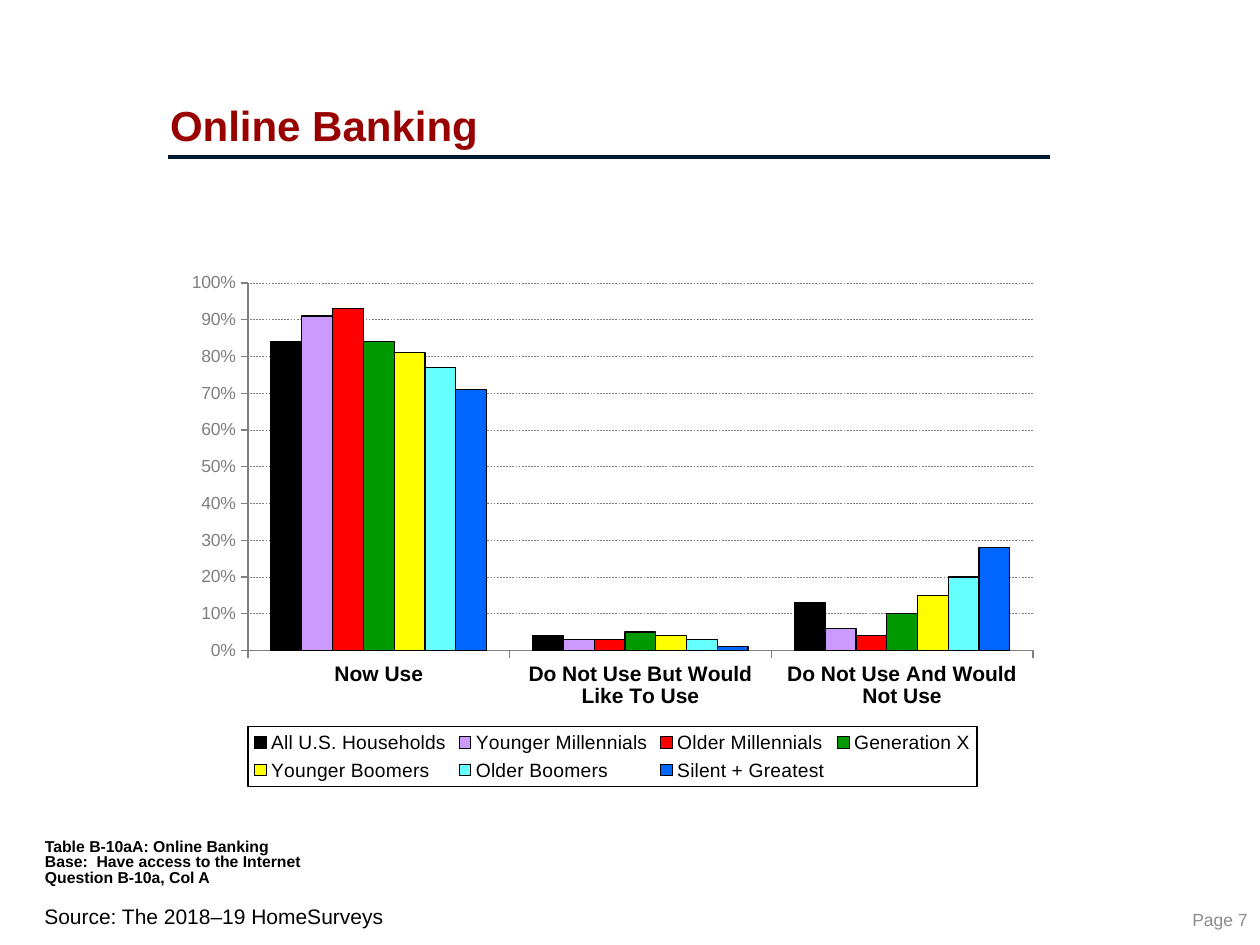
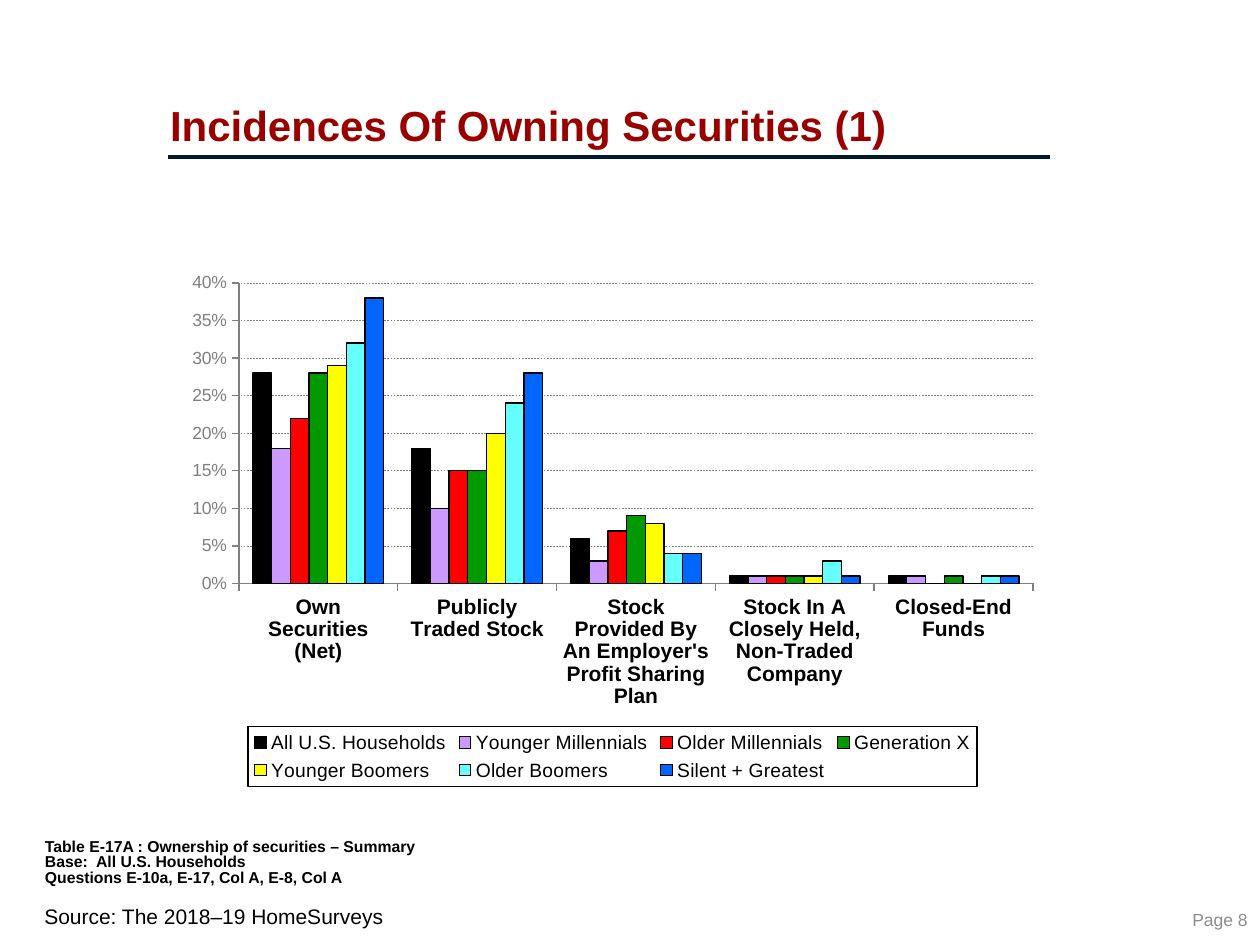
from lxml.etree import SubElement
from pptx import Presentation
from pptx.chart.data import CategoryChartData
from pptx.dml.color import RGBColor
from pptx.enum.chart import XL_CHART_TYPE, XL_LEGEND_POSITION, XL_TICK_MARK
from pptx.enum.dml import MSO_LINE
from pptx.enum.shapes import MSO_CONNECTOR
from pptx.enum.text import MSO_ANCHOR, MSO_AUTO_SIZE, PP_ALIGN
from pptx.oxml import parse_xml
from pptx.oxml.ns import nsdecls, qn
from pptx.util import Inches, Pt

PX = Inches(1) / 126
FONT = "Arial"
BLACK = RGBColor(0x00, 0x00, 0x00)
TITLE_RED = RGBColor(0x99, 0x00, 0x00)
RULE_NAVY = RGBColor(0x00, 0x19, 0x2F)
AXIS_GRAY = RGBColor(0x7F, 0x7F, 0x7F)
PAGE_GRAY = RGBColor(0x8C, 0x8C, 0x8C)
GENERATIONS = {
    "All U.S. Households": BLACK,
    "Younger Millennials": RGBColor(0xCC, 0x99, 0xFF),
    "Older Millennials": RGBColor(0xFF, 0x00, 0x00),
    "Generation X": RGBColor(0x00, 0x99, 0x00),
    "Younger Boomers": RGBColor(0xFF, 0xFF, 0x00),
    "Older Boomers": RGBColor(0x66, 0xFF, 0xFF),
    "Silent + Greatest": RGBColor(0x00, 0x66, 0xFF),
}
CHART_BOX = (175, 262, 874, 525)
LEGEND_BOX = (248, 727, 729, 60)

PAGES = [
    {
        "number": 7,
        "title": "Online Banking",
        "note": "Table B-10aA: Online Banking\n"
                "Base:  Have access to the Internet\n"
                "Question B-10a, Col A",
        "plot": (248, 283, 785, 368),
        "top": 1.0,
        "step": 0.1,
        "shares": {
            "Now Use": (0.84, 0.91, 0.93, 0.84, 0.81, 0.77, 0.71),
            "Do Not Use But Would Like To Use":
                (0.04, 0.03, 0.03, 0.05, 0.04, 0.03, 0.01),
            "Do Not Use And Would Not Use":
                (0.13, 0.06, 0.04, 0.10, 0.15, 0.20, 0.28),
        },
    },
    {
        "number": 8,
        "title": "Incidences Of Owning Securities (1)",
        "note": "Table E-17A : Ownership of securities – Summary\n"
                "Base:  All U.S. Households\n"
                "Questions E-10a, E-17, Col A, E-8, Col A",
        "plot": (239, 283, 794, 301),
        "top": 0.4,
        "step": 0.05,
        "shares": {
            "Own Securities (Net)":
                (0.28, 0.18, 0.22, 0.28, 0.29, 0.32, 0.38),
            "Publicly Traded Stock":
                (0.18, 0.10, 0.15, 0.15, 0.20, 0.24, 0.28),
            "Stock Provided By An Employer's Profit Sharing Plan":
                (0.06, 0.03, 0.07, 0.09, 0.08, 0.04, 0.04),
            "Stock In A Closely Held, Non-Traded Company":
                (0.01, 0.01, 0.01, 0.01, 0.01, 0.03, 0.01),
            "Closed-End Funds":
                (0.01, 0.01, 0, 0.01, 0, 0.01, 0.01),
        },
    },
]


def emu(*lengths):
    """Turn px lengths into EMU."""
    return [round(length * PX) for length in lengths]


def style_font(font, size, color, bold=False):
    """Apply the deck's typeface with a size, colour and weight."""
    font.name = FONT
    font.size = Pt(size)
    font.bold = bold
    font.color.rgb = color


def style_line(line, color, width):
    """Set the colour and width of a line."""
    line.color.rgb = color
    line.width = Pt(width)


def fill_frame(frame, text, anchor, insets=None):
    """Put text in a frame and return its only paragraph."""
    frame.text = text.replace("\n", "\v")
    frame.word_wrap = True
    frame.auto_size = MSO_AUTO_SIZE.NONE
    frame.vertical_anchor = anchor
    if insets:
        (frame.margin_left, frame.margin_top,
         frame.margin_right, frame.margin_bottom) = emu(*insets)
    return frame.paragraphs[0]


def add_label(slide, box, text, size, color, anchor, bold=False, insets=None):
    """Add a text box and return its paragraph."""
    label = slide.shapes.add_textbox(*emu(*box))
    paragraph = fill_frame(label.text_frame, text, anchor, insets)
    style_font(paragraph.font, size, color, bold)
    return paragraph


def set_title(slide, text):
    """Place and format the slide title."""
    title = slide.shapes.title
    title.left, title.top, title.width, title.height = emu(170, 67, 883, 89)
    heading = fill_frame(title.text_frame, text, MSO_ANCHOR.BOTTOM, (0, 0, 0, 6))
    heading.alignment = PP_ALIGN.LEFT
    heading.line_spacing = 0.8
    style_font(heading.font, 24, TITLE_RED, bold=True)


def add_title_rule(slide):
    """Draw the rule under the title."""
    rule = slide.shapes.add_connector(
        MSO_CONNECTOR.STRAIGHT, *emu(168, 157, 1050, 157))
    style_line(rule.line, RULE_NAVY, 2)
    SubElement(rule.line._get_or_add_ln().getparent(), qn("a:effectLst"))


def add_footer(slide, number):
    """Add the source line and the page number."""
    add_label(slide, (32, 897, 1124, 38), "Source: The 2018–19 HomeSurveys",
              12, BLACK, MSO_ANCHOR.TOP)
    page_label = add_label(slide, (1167, 902, 93, 34), f"Page {number}",
                           10, PAGE_GRAY, MSO_ANCHOR.MIDDLE)
    page_label.alignment = PP_ALIGN.RIGHT


def place_in_chart(element, box, index, target=""):
    """Fix a chart part at a px box on the slide."""
    for old_layout in element.findall(qn("c:layout")):
        element.remove(old_layout)
    left, top, width, height = CHART_BOX
    x, y, w, h = box
    shares = {"x": (x - left) / width, "y": (y - top) / height,
              "w": w / width, "h": h / height}
    layout = parse_xml(
        f"<c:layout {nsdecls('c')}><c:manualLayout>{target}"
        '<c:xMode val="edge"/><c:yMode val="edge"/>'
        + "".join(f'<c:{key} val="{share:.4f}"/>' for key, share in shares.items())
        + "</c:manualLayout></c:layout>")
    element.insert(index, layout)


def style_axes(chart, top, step):
    """Format the category and percentage axes."""
    categories, percents = chart.category_axis, chart.value_axis
    for axis in (categories, percents):
        axis.major_tick_mark = XL_TICK_MARK.OUTSIDE
        axis.minor_tick_mark = XL_TICK_MARK.NONE
        style_line(axis.format.line, AXIS_GRAY, 0.75)
    style_font(categories.tick_labels.font, 12, BLACK, bold=True)
    style_font(percents.tick_labels.font, 10, AXIS_GRAY)
    percents.tick_labels.number_format = "0%"
    percents.tick_labels.number_format_is_linked = False
    percents.minimum_scale, percents.maximum_scale = 0, top
    percents.major_unit = step
    gridline = percents.major_gridlines.format.line
    style_line(gridline, AXIS_GRAY, 0.25)
    gridline.dash_style = MSO_LINE.DASH


def add_legend(chart):
    """Add the framed legend below the plot."""
    chart.has_legend = True
    legend = chart.legend
    legend.position = XL_LEGEND_POSITION.BOTTOM
    legend.include_in_layout = False
    place_in_chart(legend._element, LEGEND_BOX, 1)
    legend._element.append(parse_xml(
        f"<c:spPr {nsdecls('c', 'a')}><a:ln w=\"{Pt(0.75)}\"><a:solidFill>"
        f'<a:srgbClr val="{BLACK}"/></a:solidFill></a:ln></c:spPr>'))
    style_font(legend.font, 11, BLACK)


def add_generation_chart(slide, shares, plot_box, top, step):
    """Add clustered columns, one colour for each generation."""
    data = CategoryChartData(number_format="0%")
    data.categories = list(shares)
    for generation, values in zip(GENERATIONS, zip(*shares.values())):
        data.add_series(generation, values)
    chart = slide.shapes.add_chart(
        XL_CHART_TYPE.COLUMN_CLUSTERED, *emu(*CHART_BOX), data).chart
    chart.has_title = False
    style_font(chart.font, 10, BLACK)
    columns = chart.plots[0]
    columns.gap_width, columns.overlap = 150, 0
    columns.vary_by_categories = False
    for series, color in zip(columns.series, GENERATIONS.values()):
        series.invert_if_negative = False
        series.format.fill.solid()
        series.format.fill.fore_color.rgb = color
        style_line(series.format.line, BLACK, 0.75)
    style_axes(chart, top, step)
    place_in_chart(columns._element.getparent(), plot_box, 0,
                   '<c:layoutTarget val="inner"/>')
    add_legend(chart)


def add_page(deck, page):
    """Build one chart page."""
    slide = deck.slides.add_slide(deck.slide_layouts[5])
    set_title(slide, page["title"])
    add_title_rule(slide)
    add_generation_chart(slide, page["shares"], page["plot"],
                         page["top"], page["step"])
    note = add_label(slide, (40, 832, 1096, 63), page["note"], 9, BLACK,
                     MSO_ANCHOR.MIDDLE, bold=True, insets=(5, 16, 0, 16))
    note.line_spacing = 0.8
    add_footer(slide, page["number"])


def main():
    """Build and save the deck."""
    deck = Presentation()
    deck.slide_width, deck.slide_height = emu(1260, 945)
    for page in PAGES:
        add_page(deck, page)
    deck.save("out.pptx")


if __name__ == "__main__":
    main()
